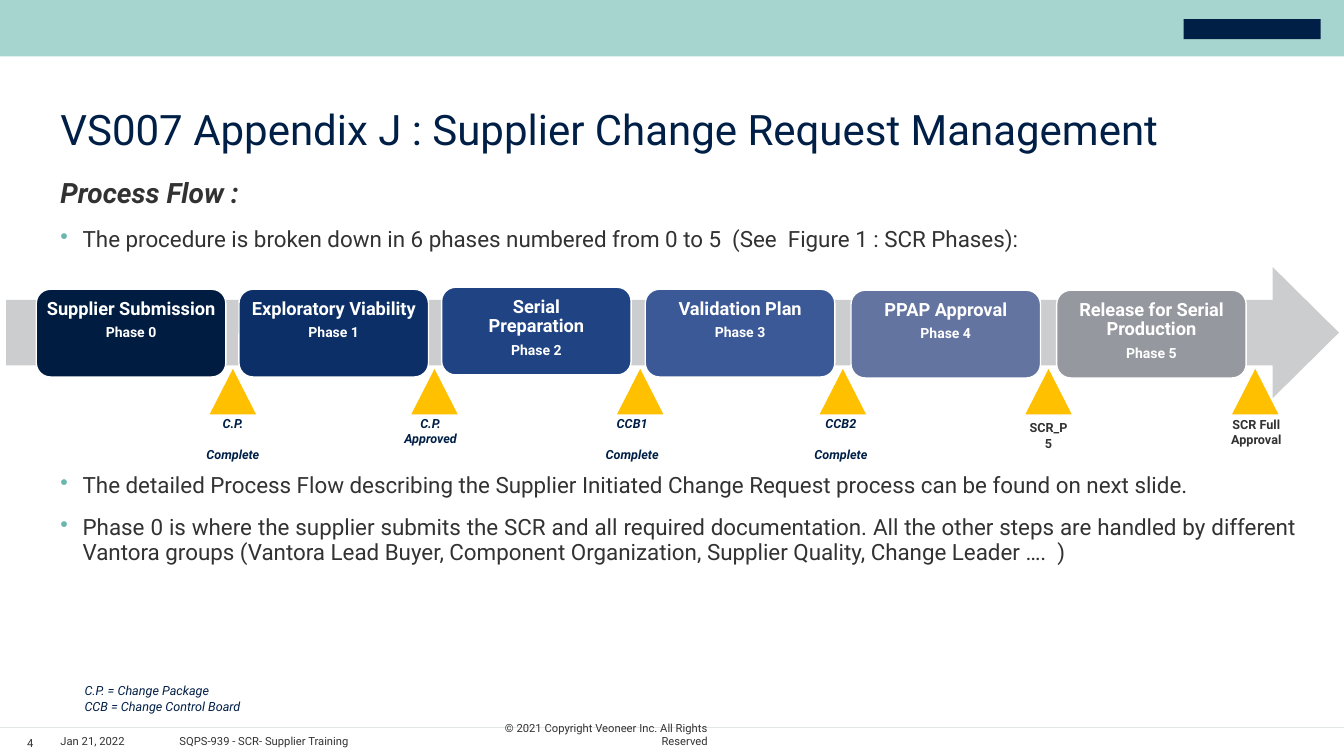
from lxml import etree
from pptx import Presentation
from pptx.dml.color import RGBColor
from pptx.enum import shapes, text
from pptx.oxml.ns import qn
from pptx.util import Inches, Pt

# Content
COLORS = {
    "band": "A6D4CF", "navy": "001F47", "ink": "323232", "bullet": "6BB7AF",
    "arrow": "CCCDCF", "gate": "FFC000", "white": "FFFFFF", "divider": "E3E6E6",
}
FONT = "Roboto"
TITLE = "VS007 Appendix J : Supplier Change Request Management"
HEADING = "Process Flow :"
INTRO = "The procedure is broken down in 6 phases numbered from 0 to 5  (See  Figure 1 : SCR Phases):"
DETAILS = [
    "The detailed Process Flow describing the Supplier Initiated Change Request "
    "process can be found on next slide.",
    "Phase 0 is where the supplier submits the SCR and all required documentation. "
    "All the other steps are handled by different Vantora groups (Vantora Lead Buyer, "
    "Component Organization, Supplier Quality, Change Leader ….  )",
]
# name, fill, left, top
PHASES = [
    ("Supplier Submission", "001C40", 0.36, 2.87),
    ("Exploratory Viability", "0B2F66", 2.37, 2.87),
    ("Serial\vPreparation", "1F4383", 4.38, 2.85),
    ("Validation Plan", "3C5997", 6.40, 2.87),
    ("PPAP Approval", "6474A0", 8.44, 2.88),
    ("Release for Serial Production", "95989F", 10.48, 2.88),
]
# lines, triangle left, label centre, label top, label width, space between lines, colour, italic
GATES = [
    (["C.P.", "Complete"], 2.08, 2.31, 4.08, 0.9, 11, "navy", True),
    (["C.P.", "Approved"], 4.08, 4.27, 4.08, 0.9, 0, "navy", True),
    (["CCB1", "Complete"], 6.12, 6.27, 4.08, 0.9, 11, "navy", True),
    (["CCB2", "Complete"], 8.13, 8.34, 4.08, 0.9, 11, "navy", True),
    (["SCR_P5"], 10.17, 10.40, 4.12, 0.64, 0, "ink", False),
    (["SCR Full", "Approval"], 12.22, 12.46, 4.09, 0.9, 0, "ink", False),
]
LEGEND = ["C.P. = Change Package", "CCB = Change Control Board"]
# text, left, top, width, height, alignment
FOOTER = [
    ("4", 0.2, 7.31, 0.2, 0.13, "CENTER"),
    ("Jan 21, 2022", 0.6, 7.29, 0.9, 0.13, "LEFT"),
    ("SQPS-939 - SCR- Supplier Training", 1.78, 7.29, 2.76, 0.13, "LEFT"),
    ("© 2021 Copyright Veoneer Inc. All Rights Reserved", 4.6, 7.16, 2.42, 0.26, "RIGHT"),
]

deck = Presentation()
deck.slide_width, deck.slide_height = Inches(13.33), Inches(7.5)
slide = deck.slides.add_slide(deck.slide_layouts[6])


def rgb(value):
    return RGBColor.from_string(COLORS.get(value, value))


def add_block(preset, left, top, width, height, fill, line=None):
    block = slide.shapes.add_shape(
        preset, Inches(left), Inches(top), Inches(width), Inches(height))
    block.shadow.inherit = False
    block.fill.solid()
    block.fill.fore_color.rgb = rgb(fill)
    if line:
        block.line.color.rgb = rgb(line)
        block.line.width = Pt(1)
    else:
        block.line.fill.background()
    return block


def fill_frame(frame, lines, inset=(0, 0)):
    frame.word_wrap = True
    frame.margin_left = frame.margin_right = Inches(inset[0])
    frame.margin_top = frame.margin_bottom = Inches(inset[1])
    frame.text = lines[0]
    for line in lines[1:]:
        frame.add_paragraph().text = line
    return frame.paragraphs


def add_text(lines, left, top, width, height, inset=(0, 0), anchor="TOP"):
    frame = slide.shapes.add_textbox(
        Inches(left), Inches(top), Inches(width), Inches(height)).text_frame
    frame.vertical_anchor = getattr(text.MSO_ANCHOR, anchor)
    return fill_frame(frame, lines, inset)


def style(paragraph, size, color, bold=False, italic=False, align="LEFT", spacing=None):
    paragraph.alignment = getattr(text.PP_ALIGN, align)
    paragraph.line_spacing = spacing
    font = paragraph.font
    font.name, font.size, font.bold, font.italic = FONT, Pt(size), bold, italic
    font.color.rgb = rgb(color)


def add_bullet(paragraph):
    props = paragraph._p.get_or_add_pPr()
    props.set("marL", str(Inches(0.22)))
    props.set("indent", str(-Inches(0.22)))
    color = etree.SubElement(props, qn("a:buClr"))
    etree.SubElement(color, qn("a:srgbClr"), val=COLORS["bullet"])
    etree.SubElement(props, qn("a:buChar"), char="•")


# Header band with a plain mark
PRESET = shapes.MSO_SHAPE
add_block(PRESET.RECTANGLE, 0, 0, 13.33, 0.56, "band")
add_block(PRESET.RECTANGLE, 11.74, 0.19, 1.36, 0.2, "navy")

# Title and introduction
style(add_text([TITLE], 0.6, 1.08, 12.13, 0.45)[0], 30, "navy", spacing=0.9)
heading, intro = add_text([HEADING, INTRO], 0.6, 1.77, 12.13, 1.25)
style(heading, 20, "ink", bold=True, italic=True, spacing=0.95)
add_bullet(intro)
style(intro, 16, "ink", spacing=0.95)
intro.space_before = Pt(12)

# Process arrow and phases
arrow = add_block(PRESET.RIGHT_ARROW, 0.06, 2.65, 13.22, 1.3, "arrow")
arrow.adjustments[1] = 0.505
for number, (name, fill, left, top) in enumerate(PHASES):
    box = add_block(PRESET.ROUNDED_RECTANGLE, left, top, 1.88, 0.87, fill, "white")
    box.adjustments[0] = 0.16
    box.text_frame.vertical_anchor = text.MSO_ANCHOR.TOP
    phase, step = fill_frame(box.text_frame, [name, f"Phase {number}"], (0.05, 0.06))
    style(phase, 13, "white", bold=True, align="CENTER", spacing=0.9)
    phase.space_after = Pt(4.5)
    style(step, 10, "white", bold=True, align="CENTER", spacing=0.9)

# Gates between phases
for lines, left, centre, top, width, gap, color, italic in GATES:
    add_block(PRESET.ISOSCELES_TRIANGLE, left, 3.66, 0.46, 0.45, "gate")
    label = add_text(lines, centre - width / 2, top, width, 0.4, (0.1, 0.05))
    for paragraph in label:
        style(paragraph, 9, color, bold=True, italic=italic, align="CENTER")
    if gap:
        label[1].space_before = Pt(gap)

# Details
for index, detail in enumerate(add_text(DETAILS, 0.6, 4.69, 12.26, 1.83)):
    add_bullet(detail)
    style(detail, 16, "ink", align="JUSTIFY", spacing=0.95)
    if index:
        detail.space_before = Pt(12)

# Legend
for entry in add_text(LEGEND, 0.74, 6.73, 2.2, 0.4, (0.1, 0.05)):
    style(entry, 9, "navy", italic=True)

# Footer
divider = slide.shapes.add_connector(
    shapes.MSO_CONNECTOR.STRAIGHT, 0, Inches(7.22), Inches(13.33), Inches(7.22))
divider.line.color.rgb = rgb("divider")
divider.line.width = Pt(0.75)
etree.SubElement(divider._element.spPr, qn("a:effectLst"))
for note, left, top, width, height, align in FOOTER:
    style(add_text([note], left, top, width, height, anchor="BOTTOM")[0], 8, "ink", align=align)

deck.save("out.pptx")
